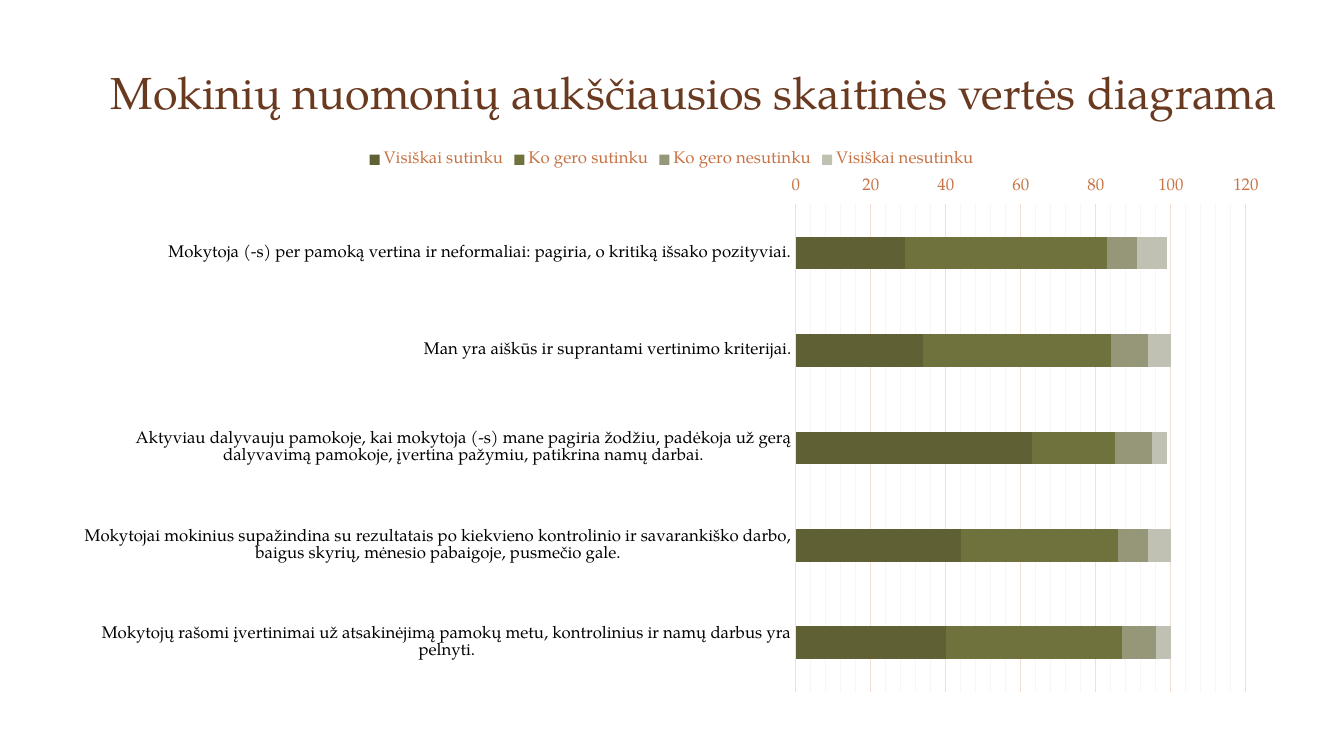
from lxml import etree
from pptx import Presentation
from pptx.chart.data import CategoryChartData
from pptx.dml.color import RGBColor
from pptx.enum.chart import XL_CHART_TYPE, XL_LEGEND_POSITION, XL_TICK_LABEL_POSITION, XL_TICK_MARK
from pptx.enum.text import MSO_ANCHOR, PP_ALIGN
from pptx.oxml import parse_xml
from pptx.oxml.ns import nsdecls, qn
from pptx.util import Pt

BAR_STACKED = XL_CHART_TYPE.BAR_STACKED
LEGEND_TOP = XL_LEGEND_POSITION.TOP
LABELS_HIGH = XL_TICK_LABEL_POSITION.HIGH
NO_TICK = XL_TICK_MARK.NONE
BOTTOM = MSO_ANCHOR.BOTTOM
LEFT = PP_ALIGN.LEFT

STATEMENTS = [
    "Mokytojų rašomi įvertinimai už atsakinėjimą pamokų metu, kontrolinius ir namų darbus yra pelnyti.",
    "Mokytojai mokinius supažindina su rezultatais po kiekvieno kontrolinio ir savarankiško darbo, "
    "baigus skyrių, mėnesio pabaigoje, pusmečio gale.",
    "Aktyviau dalyvauju pamokoje, kai mokytoja (-s) mane pagiria žodžiu, padėkoja už gerą dalyvavimą "
    "pamokoje, įvertina pažymiu, patikrina namų darbai.",
    "Man yra aiškūs ir suprantami vertinimo kriterijai.",
    "Mokytoja (-s) per pamoką vertina ir neformaliai: pagiria, o kritiką išsako pozityviai.",
]
ANSWERS = [
    ("Visiškai sutinku", [40, 44, 63, 34, 29], "5F6033"),
    ("Ko gero sutinku", [47, 42, 22, 50, 54], "70723D"),
    ("Ko gero nesutinku", [9, 8, 10, 10, 8], "959778"),
    ("Visiškai nesutinku", [4, 6, 4, 6, 8], "C0C1B3"),
]


def rgb(value):
    return RGBColor.from_string(value)


class Deck:
    font = "TeX Gyre Pagella"
    brown = "6A3A20"
    orange = "C77345"
    black = "000000"
    grid = "F2DFD4"
    minor_grid = "FBF5F2"

    def __init__(self, prs):
        self.s = prs.slides.add_slide(prs.slide_layouts[5])

    def style(self, font, size, color):
        font.name = self.font
        font.size = Pt(size)
        font.bold = False
        font.color.rgb = rgb(color)

    def line(self, fmt, color):
        fmt.line.color.rgb = rgb(color)
        fmt.line.width = Pt(0.75)

    def title(self, text, x, y, w, h):
        sp = self.s.shapes.title
        sp.left, sp.top, sp.width, sp.height = Pt(x), Pt(y), Pt(w), Pt(h)
        tf = sp.text_frame
        tf.text = text
        tf.word_wrap = True
        tf.vertical_anchor = BOTTOM
        p = tf.paragraphs[0]
        p.alignment = LEFT
        self.style(p.font, 32, self.brown)

    def bar_chart(self, categories, series, x, y, w, h, plot_box):
        data = CategoryChartData()
        data.categories = categories
        for name, values, _ in series:
            data.add_series(name, values)
        chart = self.s.shapes.add_chart(BAR_STACKED, Pt(x), Pt(y), Pt(w), Pt(h), data).chart
        self.style(chart.font, 10, self.brown)
        chart.has_title = False
        chart.has_legend = True
        chart.legend.position = LEGEND_TOP
        chart.legend.include_in_layout = False
        self.style(chart.legend.font, 12, self.orange)

        plot = chart.plots[0]
        plot.gap_width = 199
        plot.overlap = 100
        for bars, (_, _, color) in zip(plot.series, series):
            bars.format.fill.solid()
            bars.format.fill.fore_color.rgb = rgb(color)

        self.axis(chart.category_axis, self.black)
        self.line(chart.category_axis.format, self.grid)
        values = chart.value_axis
        self.axis(values, self.orange)
        values.format.line.fill.background()
        values.tick_label_position = LABELS_HIGH
        values.minimum_scale, values.maximum_scale = 0, 120
        values.major_unit, values.minor_unit = 20, 4
        values.has_major_gridlines = values.has_minor_gridlines = True
        self.line(values.major_gridlines.format, self.grid)
        self.minor_lines(chart)

        left, top, width, height = plot_box
        self.place_plot(chart, (left - x) / w, (top - y) / h, width / w, height / h)

    def axis(self, axis, color):
        axis.major_tick_mark = axis.minor_tick_mark = NO_TICK
        self.style(axis.tick_labels.font, 12, color)

    def minor_lines(self, chart):
        lines = chart.element.find(".//" + qn("c:minorGridlines"))
        lines.append(parse_xml(
            f'<c:spPr {nsdecls("c", "a")}><a:ln w="{Pt(0.75)}"><a:solidFill>'
            f'<a:srgbClr val="{self.minor_grid}"/></a:solidFill></a:ln></c:spPr>'))

    def place_plot(self, chart, x, y, w, h):
        area = chart.element.find(".//" + qn("c:plotArea"))
        for old in area.findall(qn("c:layout")):
            area.remove(old)
        layout = parse_xml(f"<c:layout {nsdecls('c')}><c:manualLayout/></c:layout>")
        settings = [("layoutTarget", "inner"), ("xMode", "edge"), ("yMode", "edge"),
                    ("x", x), ("y", y), ("w", w), ("h", h)]
        for tag, value in settings:
            etree.SubElement(layout[0], qn("c:" + tag)).set("val", str(value))
        area.insert(0, layout)


def main():
    prs = Presentation()
    prs.slide_width, prs.slide_height = Pt(960), Pt(540)
    deck = Deck(prs)
    deck.title("Mokinių nuomonių aukščiausios skaitinės vertės diagrama", 72, 34, 850, 54.5)
    deck.bar_chart(STATEMENTS, ANSWERS, 43, 100, 873.5, 402.5, (568.5, 146, 321.5, 348))
    prs.save("out.pptx")


if __name__ == "__main__":
    main()
